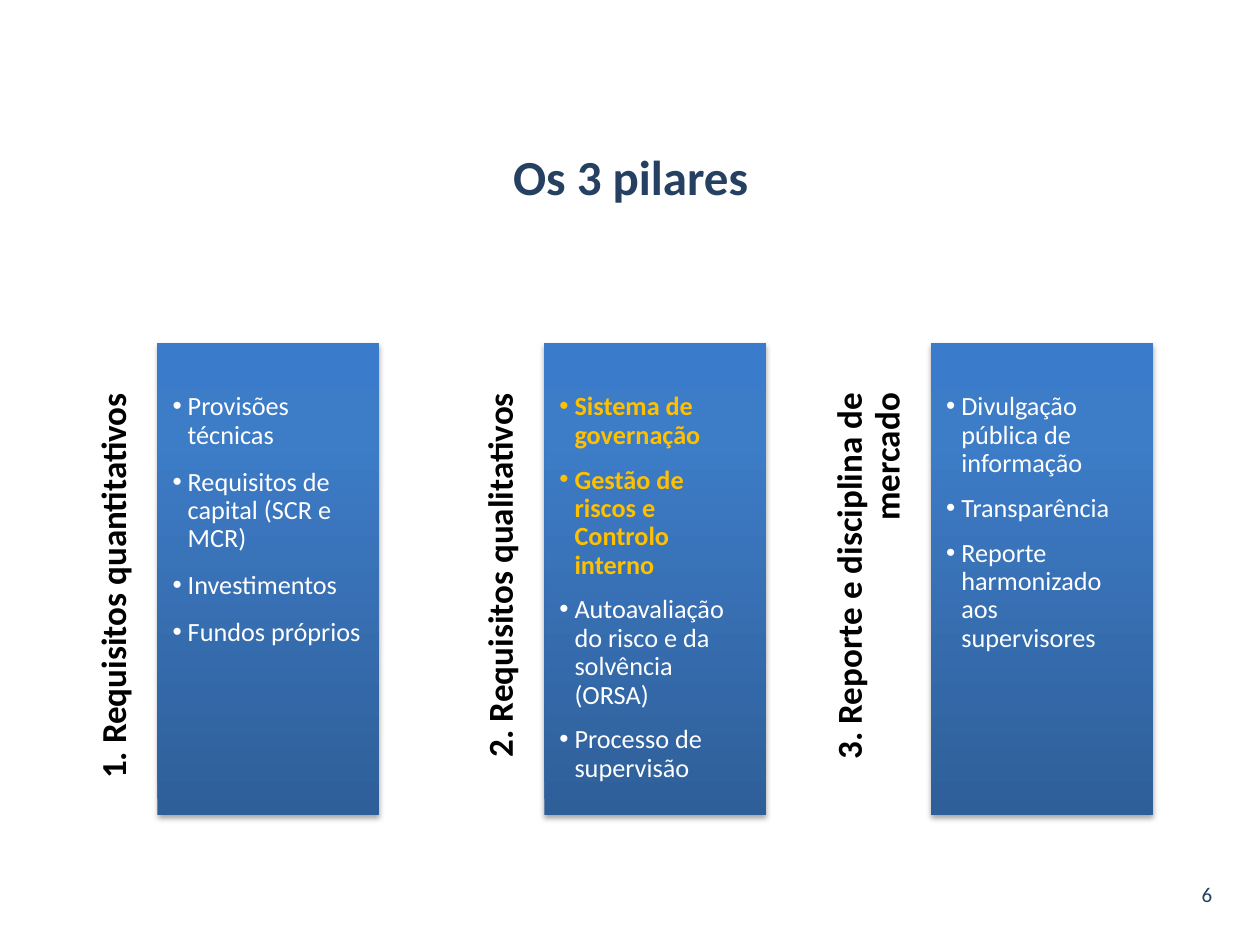
from lxml.etree import SubElement
from pptx import Presentation
from pptx.dml.color import RGBColor
from pptx.enum.shapes import MSO_SHAPE
from pptx.enum.text import MSO_ANCHOR, PP_ALIGN
from pptx.oxml.ns import qn
from pptx.util import Inches, Pt

NAVY = RGBColor(0x25, 0x40, 0x61)
BLACK = RGBColor(0, 0, 0)
WHITE = RGBColor(0xFF, 0xFF, 0xFF)
GOLD = RGBColor(0xFF, 0xC0, 0x00)
GRADIENT = [
    (0, RGBColor(0x2F, 0x5F, 0x99)),
    (80, RGBColor(0x3D, 0x7C, 0xC7)),
    (100, RGBColor(0x3A, 0x7C, 0xCB)),
]

TITLE = "Os 3 pilares"
PAGE = "6"
PILLARS = [
    {"label": "1. Requisitos quantitativos", "anchor": MSO_ANCHOR.BOTTOM,
     "label_offset": 0.42, "gap": 10.6, "highlighted": 0,
     "items": ["Provisões técnicas", "Requisitos de capital (SCR e MCR)",
               "Investimentos", "Fundos próprios"]},
    {"label": "2. Requisitos qualitativos", "anchor": MSO_ANCHOR.BOTTOM,
     "label_offset": 0.42, "gap": 9.4, "highlighted": 2,
     "items": ["Sistema de governação", "Gestão de riscos e Controlo interno",
               "Autoavaliação do risco e da solvência (ORSA)",
               "Processo de supervisão"]},
    {"label": "3. Reporte e disciplina de mercado", "anchor": MSO_ANCHOR.MIDDLE,
     "label_offset": 0.49, "gap": 9.4, "highlighted": 0,
     "items": ["Divulgação pública de informação", "Transparência",
               "Reporte harmonizado aos supervisores"]},
]

FIRST_LEFT, PITCH = 1.25, 3.07
PANEL_TOP, PANEL_WIDTH, PANEL_HEIGHT = 2.72, 1.76, 3.75
LABEL_HEIGHT = 0.46
INDENT = 0.12


def box(left, top, width, height):
    return [Inches(value) for value in (left, top, width, height)]


def set_frame(frame, anchor, insets):
    """Wrap the text, anchor it and set left, top, right, bottom insets."""
    frame.word_wrap = True
    frame.vertical_anchor = anchor
    for side, inset in zip(("left", "top", "right", "bottom"), insets):
        setattr(frame, f"margin_{side}", Inches(inset))


def write(paragraph, text, align, color, size, bold=False):
    paragraph.text = text
    paragraph.alignment = align
    font = paragraph.runs[0].font
    font.color.rgb = color
    formats = {"name": "Calibri", "size": Pt(size), "bold": bold}
    for attribute, value in formats.items():
        setattr(font, attribute, value)


def add_bullet(paragraph):
    properties = paragraph._p.get_or_add_pPr()
    properties.set("marL", str(Inches(INDENT)))
    properties.set("indent", str(-Inches(INDENT)))
    SubElement(properties, qn("a:buFont"), typeface="Arial")
    SubElement(properties, qn("a:buChar"), char="•")


def add_color(parent, color):
    return SubElement(parent, qn("a:srgbClr"), val=str(color))


def style_panel(panel):
    """Give the panel its three-stop gradient and soft shadow, without a line."""
    panel.fill.gradient()
    panel.fill.gradient_angle = 90
    panel.line.fill.background()
    panel.shadow.inherit = False
    properties = panel._element.spPr
    stops = properties.find(qn("a:gradFill")).find(qn("a:gsLst"))
    for stop in list(stops):
        stops.remove(stop)
    for position, color in GRADIENT:
        add_color(SubElement(stops, qn("a:gs"), pos=str(position * 1000)), color)
    shadow = SubElement(
        properties.find(qn("a:effectLst")), qn("a:outerShdw"),
        blurRad=str(Pt(3.1)), dist=str(Pt(1.8)), dir="5400000", rotWithShape="0")
    SubElement(add_color(shadow, BLACK), qn("a:alpha"), val="35000")


def add_label(slide, pillar, panel_left):
    center_x = panel_left - pillar["label_offset"]
    center_y = PANEL_TOP + PANEL_HEIGHT / 2
    label = slide.shapes.add_textbox(*box(
        center_x - PANEL_HEIGHT / 2, center_y - LABEL_HEIGHT / 2,
        PANEL_HEIGHT, LABEL_HEIGHT))
    label.rotation = 270
    set_frame(label.text_frame, pillar["anchor"], (0, 0, 0.4, 0))
    paragraph = label.text_frame.paragraphs[0]
    write(paragraph, pillar["label"], PP_ALIGN.RIGHT, BLACK, 20, bold=True)
    paragraph.line_spacing = 0.9


def add_panel(slide, pillar, left):
    panel = slide.shapes.add_shape(
        MSO_SHAPE.RECTANGLE, *box(left, PANEL_TOP, PANEL_WIDTH, PANEL_HEIGHT))
    style_panel(panel)
    frame = panel.text_frame
    set_frame(frame, MSO_ANCHOR.TOP, (0.12, 0.4, 0.12, 0.12))
    for index, item in enumerate(pillar["items"]):
        paragraph = frame.add_paragraph() if index else frame.paragraphs[0]
        highlighted = index < pillar["highlighted"]
        add_bullet(paragraph)
        write(paragraph, item, PP_ALIGN.LEFT,
              GOLD if highlighted else WHITE, 15, highlighted)
        paragraph.line_spacing = 0.9
        paragraph.space_after = Pt(pillar["gap"])


def main():
    presentation = Presentation()
    presentation.slide_width, presentation.slide_height = Inches(10), Inches(7.5)
    slide = presentation.slides.add_slide(presentation.slide_layouts[5])

    title = slide.shapes.title
    title.left, title.top, title.width, title.height = box(0.28, 1.11, 9.45, 0.57)
    set_frame(title.text_frame, MSO_ANCHOR.MIDDLE, (0.1, 0.05, 0.1, 0.05))
    write(title.text_frame.paragraphs[0], TITLE, PP_ALIGN.CENTER, NAVY, 28, bold=True)

    page = slide.shapes.add_textbox(*box(7.39, 6.9, 2.33, 0.4))
    set_frame(page.text_frame, MSO_ANCHOR.MIDDLE, (0.1, 0.05, 0.1, 0.05))
    write(page.text_frame.paragraphs[0], PAGE, PP_ALIGN.RIGHT, NAVY, 12)

    for column, pillar in enumerate(PILLARS):
        left = FIRST_LEFT + column * PITCH
        add_label(slide, pillar, left)
        add_panel(slide, pillar, left)

    presentation.save("out.pptx")


if __name__ == "__main__":
    main()
